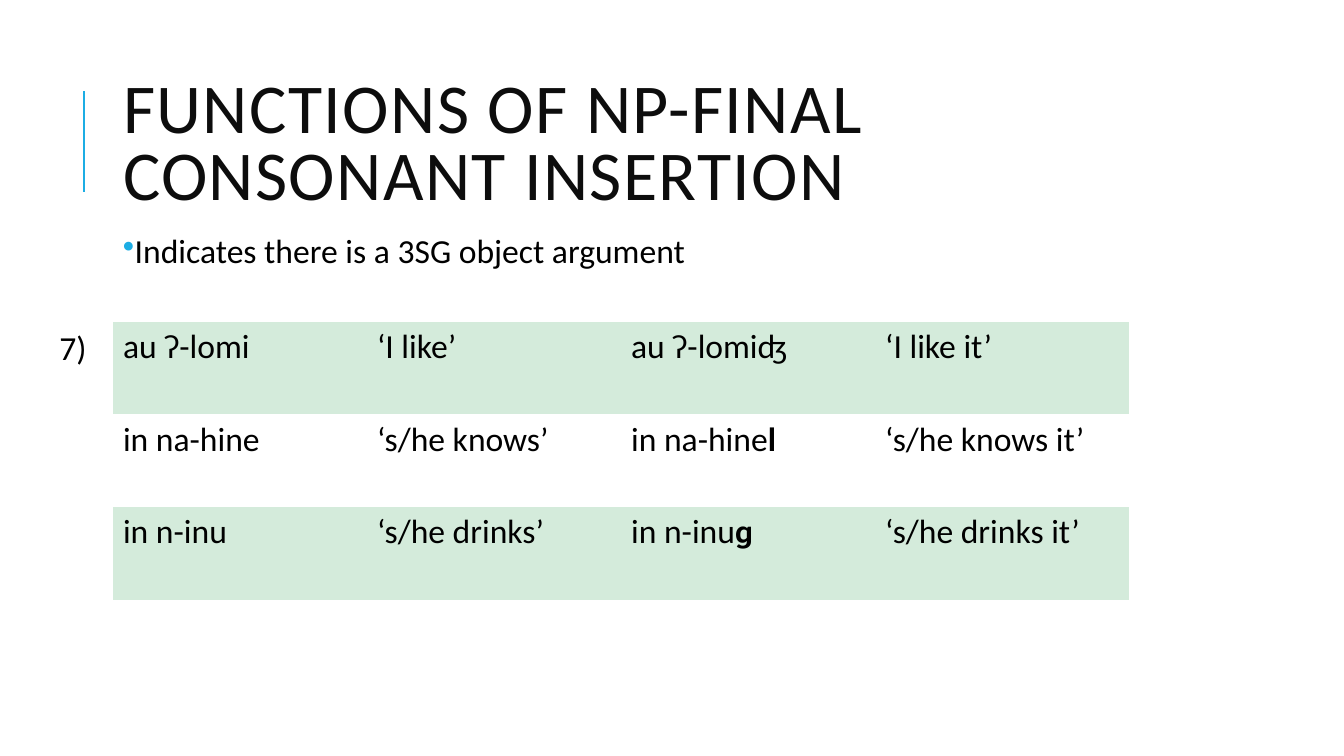
import pptx
import pptx.util
import pptx.dml.color
import pptx.enum.shapes
import pptx.enum.text
import pptx.oxml.ns
import pptx.oxml.xmlchemy

Inches = pptx.util.Inches
Pt = pptx.util.Pt
qn = pptx.oxml.ns.qn
RGB = pptx.dml.color.RGBColor.from_string
new_element = pptx.oxml.xmlchemy.OxmlElement

HEADING = "FUNCTIONS OF NP-FINAL CONSONANT INSERTION"
CLAIM = "Indicates there is a 3SG object argument"
EXAMPLE_NUMBER = "7)"
EXAMPLES = [
    [("au ʔ-lomi", ""), ("‘I like’", ""), ("au ʔ-lomiʤ", ""), ("‘I like it’", "")],
    [("in na-hine", ""), ("‘s/he knows’", ""), ("in na-hine", "l"), ("‘s/he knows it’", "")],
    [("in n-inu", ""), ("‘s/he drinks’", ""), ("in n-inu", "ɡ"), ("‘s/he drinks it’", "")],
]

THEME = {
    "accent": "1CADE4",
    "band": "D4EBDB",
    "heading": {"name": "Calibri", "size": Pt(50), "color": "0D0D0D", "bold": False},
    "body": {"name": "Calibri", "size": Pt(24), "color": "000000", "bold": False},
    "table_style": "{2D5ABB26-0587-4C30-8999-92F81FD0307C}",
}
LEFT, WIDTH = 1.12, 10.63
EXAMPLES_TOP = 3.19
COLUMN_WIDTH, ROW_HEIGHT = 2.52, 0.92


def apply_format(target, values):
    for key, value in values.items():
        if key == "color":
            target.color.rgb = RGB(value)
        else:
            setattr(target, key, value)


def add_words(paragraph, words, style, **changes):
    run = paragraph.add_run()
    run.text = words
    apply_format(run.font, {**THEME[style], **changes})
    return run


def add_heading(slide):
    heading = slide.shapes.title
    apply_format(heading, {"left": Inches(LEFT), "top": Inches(0.64),
                           "width": Inches(WIDTH), "height": Inches(1.64)})
    frame = heading.text_frame
    apply_format(frame, {"word_wrap": True,
                         "auto_size": pptx.enum.text.MSO_AUTO_SIZE.NONE,
                         "vertical_anchor": pptx.enum.text.MSO_ANCHOR.MIDDLE})
    line = frame.paragraphs[0]
    apply_format(line, {"alignment": pptx.enum.text.PP_ALIGN.LEFT, "line_spacing": 0.8})
    words = add_words(line, HEADING, "heading")
    words._r.get_or_add_rPr().set("spc", "100")


def add_accent_rule(slide):
    rule = slide.shapes.add_connector(
        pptx.enum.shapes.MSO_CONNECTOR.STRAIGHT,
        Inches(0.83), Inches(1.9), Inches(0.83), Inches(0.9))
    apply_format(rule.line, {"color": THEME["accent"], "width": Pt(1.5)})
    rule._element.spPr.append(new_element("a:effectLst"))


def add_claim(slide):
    claim = slide.shapes.add_textbox(Inches(LEFT), Inches(2.28), Inches(WIDTH), Inches(0.56))
    claim.text_frame.word_wrap = True
    line = claim.text_frame.paragraphs[0]
    apply_format(line, {"line_spacing": 0.9, "space_after": Pt(2)})
    properties = line._p.get_or_add_pPr()
    properties.set("marL", str(Inches(0.1)))
    properties.set("indent", str(Inches(-0.1)))
    bullet_color = new_element("a:buClr")
    color = new_element("a:srgbClr")
    color.set("val", THEME["accent"])
    bullet_color.append(color)
    bullet = new_element("a:buChar")
    bullet.set("char", "•")
    properties.extend([bullet_color, bullet])
    add_words(line, CLAIM, "body")


def add_examples(slide):
    column_count = len(EXAMPLES[0])
    examples = slide.shapes.add_table(
        len(EXAMPLES), column_count, Inches(LEFT), Inches(EXAMPLES_TOP),
        Inches(COLUMN_WIDTH * column_count), Inches(ROW_HEIGHT * len(EXAMPLES))).table
    apply_format(examples, {"first_row": False, "horz_banding": False})
    examples._tbl.tblPr.find(qn("a:tableStyleId")).text = THEME["table_style"]
    for column in examples.columns:
        column.width = Inches(COLUMN_WIDTH)
    for row_index, row in enumerate(EXAMPLES):
        examples.rows[row_index].height = Inches(ROW_HEIGHT)
        for column_index, (stem, inserted) in enumerate(row):
            cell = examples.cell(row_index, column_index)
            if row_index % 2 == 0:
                cell.fill.solid()
                cell.fill.fore_color.rgb = RGB(THEME["band"])
            else:
                cell.fill.background()
            line = cell.text_frame.paragraphs[0]
            add_words(line, stem, "body")
            if inserted:
                add_words(line, inserted, "body", bold=True)


def add_example_number(slide):
    number = slide.shapes.add_textbox(
        Inches(0.49), Inches(EXAMPLES_TOP), Inches(0.47), Inches(0.5))
    apply_format(number.text_frame, {
        "word_wrap": False,
        "auto_size": pptx.enum.text.MSO_AUTO_SIZE.SHAPE_TO_FIT_TEXT})
    add_words(number.text_frame.paragraphs[0], EXAMPLE_NUMBER, "body")


def main():
    deck = pptx.Presentation()
    apply_format(deck, {"slide_width": Inches(13.33), "slide_height": Inches(7.5)})
    slide = deck.slides.add_slide(deck.slide_layouts.get_by_name("Title Only"))
    for add_part in (add_accent_rule, add_heading, add_examples, add_claim, add_example_number):
        add_part(slide)
    deck.save("out.pptx")


if __name__ == "__main__":
    main()
